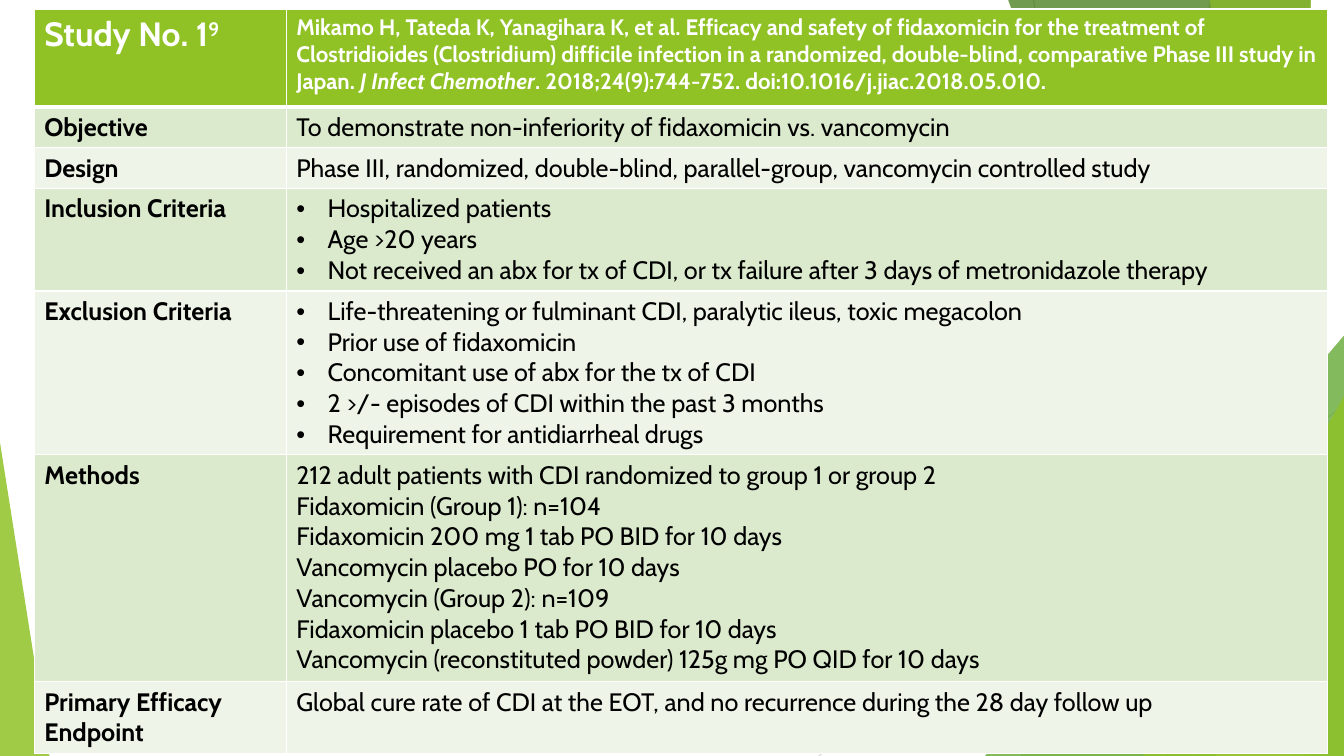
from lxml import etree
from pptx import Presentation
from pptx import util as u
from pptx.dml.color import RGBColor
from pptx.enum import shapes, text
from pptx.oxml.ns import qn

WHITE = RGBColor(0xFF, 0xFF, 0xFF)
BLACK = RGBColor(0x00, 0x00, 0x00)
GREEN = RGBColor(0x90, 0xC2, 0x26)
MID_GREEN = RGBColor(0x54, 0xA0, 0x21)
DARK_GREEN = RGBColor(0x3F, 0x78, 0x19)
LIME = RGBColor(0xC0, 0xE4, 0x74)
BANDS = RGBColor(0xDB, 0xE9, 0xCD), RGBColor(0xEE, 0xF4, 0xE8)
GREY = RGBColor(0xBF, 0xBF, 0xBF)
PALE_GREY = RGBColor(0xD9, 0xD9, 0xD9)

FONT = "Cabin"
WIDTH, HEIGHT = 13.33, 7.5

# Header runs: text, size, style
STUDY = [("Study No. 1", 24, None), ("9", 24, "superscript")]
CITATION = [
    ("Mikamo H, Tateda K, Yanagihara K, et al. Efficacy and safety of fidaxomicin "
     "for the treatment of Clostridioides (Clostridium) difficile infection in a "
     "randomized, double-blind, comparative Phase III study in Japan. ", 16, None),
    ("J Infect Chemother", 16, "italic"),
    (". 2018;24(9):744-752. doi:10.1016/j.jiac.2018.05.010.", 16, None),
]

# Label, lines, bulleted
ROWS = [
    ("Objective", ["To demonstrate non-inferiority of fidaxomicin vs. vancomycin"], False),
    ("Design", ["Phase III, randomized, double-blind, parallel-group, "
                "vancomycin controlled study"], False),
    ("Inclusion Criteria", [
        "Hospitalized patients",
        "Age >20 years",
        "Not received an abx for tx of CDI, or tx failure after 3 days of "
        "metronidazole therapy"], True),
    ("Exclusion Criteria", [
        "Life-threatening or fulminant CDI, paralytic ileus, toxic megacolon",
        "Prior use of fidaxomicin",
        "Concomitant use of abx for the tx of CDI",
        "2 >/- episodes of CDI within the past 3 months",
        "Requirement for antidiarrheal drugs"], True),
    ("Methods", [
        "212 adult patients with CDI randomized to group 1 or group 2",
        "Fidaxomicin (Group 1): n=104",
        "Fidaxomicin 200 mg 1 tab PO BID for 10 days",
        "Vancomycin placebo PO for 10 days\vVancomycin (Group 2): n=109",
        "Fidaxomicin placebo 1 tab PO BID for 10 days",
        "Vancomycin (reconstituted powder) 125g mg PO QID for 10 days"], False),
    ("Primary Efficacy Endpoint", [
        "Global cure rate of CDI at the EOT, and no recurrence during the "
        "28 day follow up"], False),
]
TABLE_LEFT, TABLE_TOP = 0.34, 0.09
COLUMNS = [2.5, 10.33]
ROW_HEIGHTS = [0.97, 0.37, 0.37, 0.91, 1.46, 2.25, 0.64]

LINES = [((10.25, 0), (11.58, HEIGHT), GREY), ((WIDTH, 4.03), (8.12, HEIGHT), PALE_GREY)]

# Back to front. Wedge: left edge at top and bottom; triangle: left, top, width, apex
FACETS = [
    ("wedge", (12.28, 10.04), GREEN, 30),
    ("wedge", (10.5, 11.83), GREEN, 20),
    ("triangle", (9.77, 3.33, 3.56, 1), MID_GREEN, 72),
    ("wedge", (10.21, 12.91), DARK_GREEN, 70),
    ("wedge", (13.03, 11.92), LIME, 70),
    ("wedge", (11.96, 13.18), GREEN, 65),
    ("triangle", (11.34, 3.93, 1.99, 1), GREEN, 80),
    ("triangle", (0, 4.39, 0.49, 0), GREEN, 85),
]


def add_line(slide, start, end, color):
    line = slide.shapes.add_connector(
        shapes.MSO_CONNECTOR.STRAIGHT, *(u.Inches(v) for v in start + end))
    line.line.color.rgb = color
    line.line.width = u.Pt(0.75)
    etree.SubElement(line._element.spPr, qn("a:effectLst"))


def add_facet(slide, kind, geometry, color, opacity):
    if kind == "wedge":
        top_x, bottom_x = geometry
        builder = slide.shapes.build_freeform(top_x, 0, scale=u.Inches(1))
        builder.add_line_segments([(WIDTH, 0), (WIDTH, HEIGHT), (bottom_x, HEIGHT)])
        sp = builder.convert_to_shape()
    else:
        left, top, width, apex = geometry
        sp = slide.shapes.add_shape(
            shapes.MSO_SHAPE.ISOSCELES_TRIANGLE,
            *(u.Inches(v) for v in (left, top, width, HEIGHT - top)))
        sp.adjustments[0] = apex
    sp.shadow.inherit = False
    sp.line.fill.background()
    sp.fill.solid()
    sp.fill.fore_color.rgb = color
    srgb = sp._element.spPr.find(".//" + qn("a:srgbClr"))
    etree.SubElement(srgb, qn("a:alpha"), val=str(opacity * 1000))


def style_run(r, size, color, bold):
    r.font.name = FONT
    r.font.size = u.Pt(size)
    r.font.bold = bold
    r.font.color.rgb = color


def style_cell(cell, color, bottom_width=1):
    """Draw white borders, then fill: the schema wants them in that order."""
    tc_pr = cell._tc.get_or_add_tcPr()
    for side, width in (("L", 1), ("R", 1), ("T", 1), ("B", bottom_width)):
        ln = etree.SubElement(tc_pr, qn("a:ln" + side), w=str(u.Pt(width)))
        fill = etree.SubElement(ln, qn("a:solidFill"))
        etree.SubElement(fill, qn("a:srgbClr"), val=str(WHITE))
    cell.fill.solid()
    cell.fill.fore_color.rgb = color
    cell.vertical_anchor = text.MSO_ANCHOR.TOP


def add_bullet(p):
    p_pr = p._p.get_or_add_pPr()
    p_pr.set("marL", str(u.Inches(0.31)))
    p_pr.set("indent", str(-u.Inches(0.31)))
    etree.SubElement(p_pr, qn("a:buFont"), typeface="Arial")
    etree.SubElement(p_pr, qn("a:buChar"), char="•")


def fill_header(cell, runs):
    style_cell(cell, GREEN, bottom_width=3)
    p = cell.text_frame.paragraphs[0]
    for words, size, style in runs:
        r = p.add_run()
        r.text = words
        style_run(r, size, WHITE, True)
        if style == "italic":
            r.font.italic = True
        elif style == "superscript":
            r.font._element.set("baseline", "30000")


def fill_body(cell, lines, color, bold=False, bulleted=False):
    style_cell(cell, color)
    cell.text_frame.text = "\n".join(lines)
    for p in cell.text_frame.paragraphs:
        if bulleted:
            add_bullet(p)
        for r in p.runs:
            style_run(r, 18, BLACK, bold)


def add_study_table(slide):
    frame = slide.shapes.add_table(
        len(ROW_HEIGHTS), len(COLUMNS), u.Inches(TABLE_LEFT), u.Inches(TABLE_TOP),
        u.Inches(sum(COLUMNS)), u.Inches(sum(ROW_HEIGHTS)))
    table = frame.table
    table.horz_banding = False
    for column, width in zip(table.columns, COLUMNS):
        column.width = u.Inches(width)
    for row, height in zip(table.rows, ROW_HEIGHTS):
        row.height = u.Inches(height)
    for col, runs in enumerate((STUDY, CITATION)):
        fill_header(table.cell(0, col), runs)
    for i, (label, lines, bulleted) in enumerate(ROWS):
        band = BANDS[i % 2]
        fill_body(table.cell(i + 1, 0), [label], band, bold=True)
        fill_body(table.cell(i + 1, 1), lines, band, bulleted=bulleted)


def main():
    prs = Presentation()
    prs.slide_width, prs.slide_height = u.Inches(WIDTH), u.Inches(HEIGHT)
    slide = prs.slides.add_slide(prs.slide_layouts[6])
    for start, end, color in LINES:
        add_line(slide, start, end, color)
    for facet in FACETS:
        add_facet(slide, *facet)
    add_study_table(slide)
    prs.save("out.pptx")


if __name__ == "__main__":
    main()
